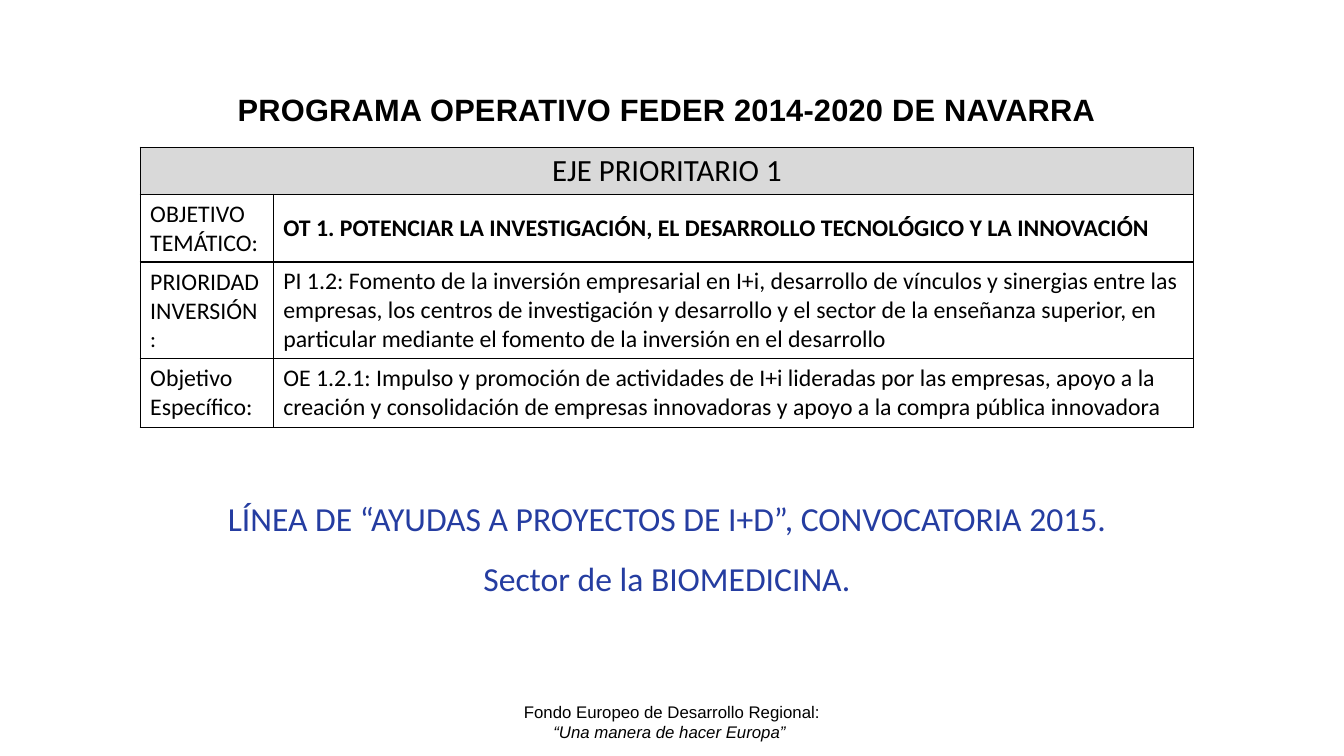
from dataclasses import dataclass

from lxml.etree import SubElement
from pptx import Presentation
from pptx.dml.color import RGBColor
from pptx.enum.text import MSO_ANCHOR, PP_ALIGN
from pptx.oxml.ns import qn
from pptx.util import Inches, Pt

WIDTH, HEIGHT = 13.33, 7.5
LEFT, SPAN = 1.39, 10.45


@dataclass(frozen=True)
class Theme:
    """Colours, fonts and type sizes of the slide."""
    ink: str = "000000"
    blue: str = "253DA1"
    grey: str = "D9D9D9"
    heading_font: str = "Arial"
    body_font: str = "Calibri"
    heading: int = 22
    call: int = 24
    cell: int = 17
    colon: int = 16
    footer: int = 12
    border: int = 1


THEME = Theme()
HEADING = {"name": THEME.heading_font, "size": Pt(THEME.heading), "bold": True}
FOOTER = {"name": THEME.heading_font, "size": Pt(THEME.footer)}
CALL = {"name": THEME.body_font, "size": Pt(THEME.call)}
AXIS = {"name": THEME.body_font, "size": Pt(THEME.heading), "bold": False}
CELL = {"name": THEME.body_font, "size": Pt(THEME.cell), "bold": False}
STRONG = CELL | {"bold": True}
COLON = CELL | {"size": Pt(THEME.colon)}

COLUMNS = (1.32, 9.13)
ROWS = (0.47, 0.67, 0.96, 0.68)
OBJECTIVES = (
    ([("OBJETIVO TEMÁTICO:", CELL)],
     [("OT 1. POTENCIAR LA INVESTIGACIÓN, EL DESARROLLO TECNOLÓGICO Y LA INNOVACIÓN", STRONG)]),
    ([("PRIORIDAD INVERSIÓN", CELL), (":", COLON)],
     [("PI 1.2: Fomento de la inversión empresarial en I+i, desarrollo de vínculos y sinergias "
       "entre las empresas, los centros de investigación y desarrollo y el sector de la enseñanza "
       "superior, en particular mediante el fomento de la inversión en el desarrollo", CELL)]),
    ([("Objetivo Específico:", CELL)],
     [("OE 1.2.1: Impulso y promoción de actividades de I+i lideradas por las empresas, apoyo a la "
       "creación y consolidación de empresas innovadoras y apoyo a la compra pública innovadora", CELL)]),
)


def apply(target, values):
    """Set each attribute named in a dict of format values."""
    for name, value in values.items():
        setattr(target, name, value)


def write_spans(para, spans, color=THEME.ink, tracking=0):
    """Add formatted runs to a paragraph."""
    for text, values in spans:
        span = para.add_run()
        span.text = text
        apply(span.font, values)
        span.font.color.rgb = RGBColor.from_string(color)
        if tracking:
            span.font._element.set("spc", str(tracking))


def add_text(page, area, paragraphs, spacing=1.0, **style):
    """Add a wrapped text box with centred paragraphs."""
    box = page.shapes.add_textbox(*map(Inches, area))
    frame = box.text_frame
    frame.word_wrap = True
    for index, spans in enumerate(paragraphs):
        para = frame.add_paragraph() if index else frame.paragraphs[0]
        apply(para, {"alignment": PP_ALIGN.CENTER, "line_spacing": spacing})
        write_spans(para, spans, **style)


def draw_borders(cell):
    """Outline a cell on its four sides."""
    properties = cell._tc.get_or_add_tcPr()
    for position, side in enumerate(("a:lnL", "a:lnR", "a:lnT", "a:lnB")):
        line = SubElement(properties, qn(side), w=str(Pt(THEME.border)))
        fill = SubElement(line, qn("a:solidFill"))
        SubElement(fill, qn("a:srgbClr"), val=THEME.ink)
        properties.insert(position, line)


def fill_cell(cell, spans, alignment=PP_ALIGN.LEFT):
    """Write a cell's text in the middle of its height."""
    cell.vertical_anchor = MSO_ANCHOR.MIDDLE
    para = cell.text_frame.paragraphs[0]
    para.alignment = alignment
    write_spans(para, spans)


def add_objectives(page, top):
    """Add the table of the priority axis and its objectives."""
    area = map(Inches, (LEFT, top, SPAN, sum(ROWS)))
    table = page.shapes.add_table(len(ROWS), len(COLUMNS), *area).table
    apply(table, {"first_row": False, "horz_banding": False})
    for column, width in zip(table.columns, COLUMNS):
        column.width = Inches(width)
    for row, height in zip(table.rows, ROWS):
        row.height = Inches(height)
    for cell in table.iter_cells():
        cell.fill.background()
        draw_borders(cell)
    header = table.cell(0, 0)
    header.merge(table.cell(0, len(COLUMNS) - 1))
    header.fill.solid()
    header.fill.fore_color.rgb = RGBColor.from_string(THEME.grey)
    fill_cell(header, [("EJE PRIORITARIO 1", AXIS)], PP_ALIGN.CENTER)
    for row, entries in enumerate(OBJECTIVES, start=1):
        for column, spans in enumerate(entries):
            fill_cell(table.cell(row, column), spans)


def main():
    """Build and save the slide."""
    deck = Presentation()
    apply(deck, {"slide_width": Inches(WIDTH), "slide_height": Inches(HEIGHT)})
    page = deck.slides.add_slide(deck.slide_layouts[6])
    add_text(page, (5.08, 6.91, 3.17, 0.52),
             [[("Fondo Europeo de Desarrollo Regional: ", FOOTER),
               ("“Una manera de hacer Europa” ", FOOTER | {"italic": True})]])
    add_text(page, (LEFT, 0.89, SPAN, 0.58),
             [[("PROGRAMA OPERATIVO FEDER 2014-2020 DE NAVARRA", HEADING)]],
             spacing=0.9, tracking=20)
    add_objectives(page, 1.46)
    add_text(page, (LEFT, 4.69, SPAN, 1.25),
             [[("LÍNEA DE “AYUDAS A PROYECTOS DE I+D”, CONVOCATORIA 2015.", CALL)],
              [("Sector de la BIOMEDICINA.", CALL)]],
             spacing=1.5, color=THEME.blue)
    deck.save("out.pptx")


if __name__ == "__main__":
    main()
